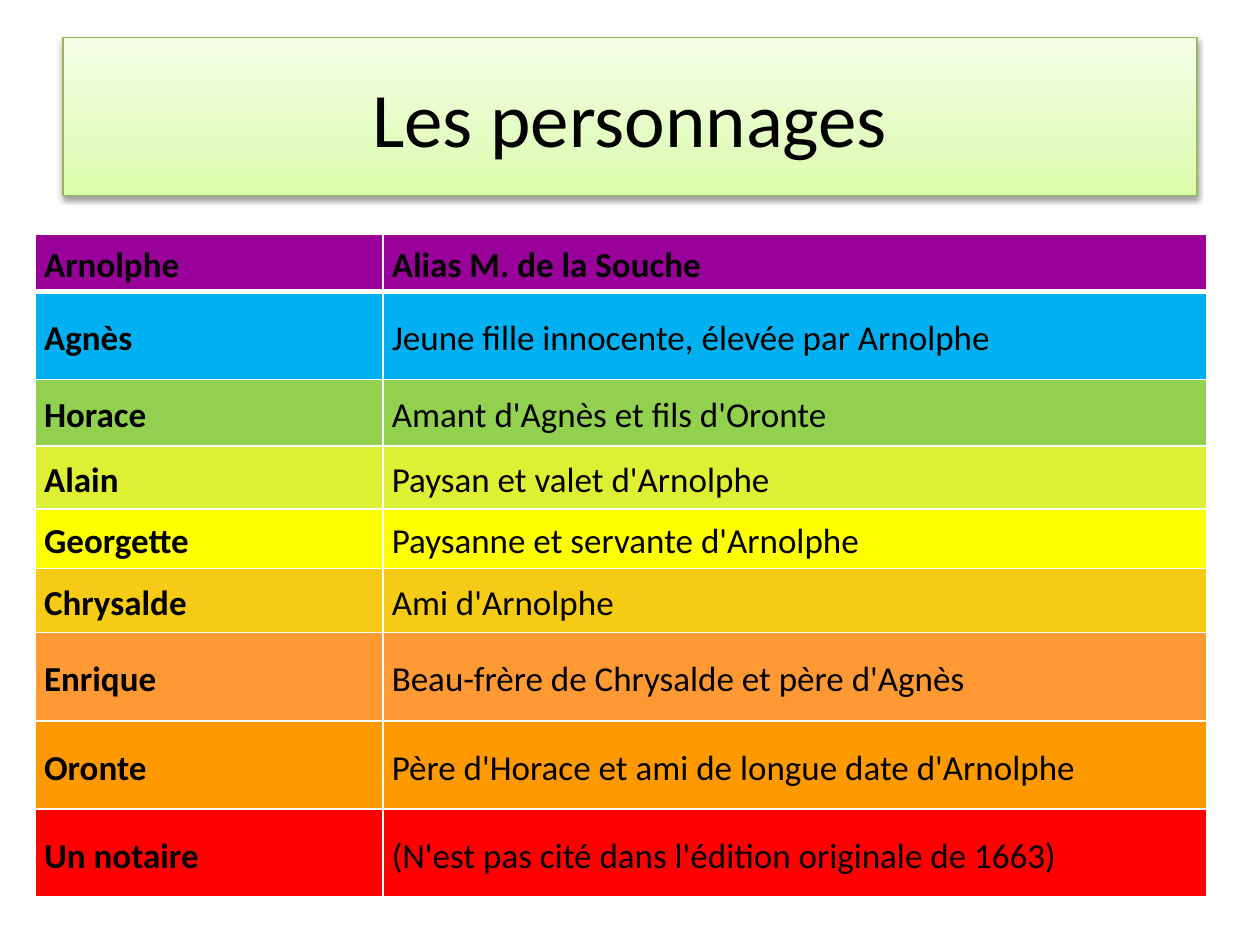
from lxml import etree
from pptx import Presentation
from pptx.dml.color import RGBColor
from pptx.enum.text import MSO_ANCHOR, PP_ALIGN
from pptx.util import Inches, Pt

MIDDLE = MSO_ANCHOR.MIDDLE
CENTER = PP_ALIGN.CENTER
JUSTIFY = PP_ALIGN.JUSTIFY
NS = "http://schemas.openxmlformats.org/drawingml/2006/main"
FONT = "Calibri"
BLACK = RGBColor(0x00, 0x00, 0x00)
WHITE = RGBColor(0xFF, 0xFF, 0xFF)
GREEN = RGBColor(0x98, 0xB9, 0x55)
STOPS = [
    (0, RGBColor(0xDA, 0xFD, 0xA7)),
    (35, RGBColor(0xE4, 0xFC, 0xC2)),
    (100, RGBColor(0xF5, 0xFF, 0xE7)),
]
CAST = [
    ("Arnolphe", "Alias M. de la Souche", 0.38, RGBColor(0x99, 0x00, 0x99)),
    ("Agnès", "Jeune fille innocente, élevée par Arnolphe", 0.7, RGBColor(0x00, 0xB0, 0xF0)),
    ("Horace", "Amant d'Agnès et fils d'Oronte", 0.53, RGBColor(0x92, 0xD0, 0x50)),
    ("Alain", "Paysan et valet d'Arnolphe", 0.5, RGBColor(0xDE, 0xF0, 0x34)),
    ("Georgette", "Paysanne et servante d'Arnolphe", 0.47, RGBColor(0xFF, 0xFF, 0x00)),
    ("Chrysalde", "Ami d'Arnolphe", 0.51, RGBColor(0xF6, 0xCB, 0x16)),
    ("Enrique", "Beau-frère de Chrysalde et père d'Agnès", 0.7, RGBColor(0xFF, 0x99, 0x33)),
    ("Oronte", "Père d'Horace et ami de longue date d'Arnolphe", 0.7, RGBColor(0xFF, 0x99, 0x00)),
    ("Un notaire", "(N'est pas cité dans l'édition originale de 1663)", 0.7, RGBColor(0xFF, 0x00, 0x00)),
]
WIDTHS = [2.76, 6.54]


def style(para, size, bold, align):
    para.alignment = align
    font = para.runs[0].font
    font.name, font.size, font.bold = FONT, Pt(size), bold
    font.color.rgb = BLACK


def add_xml(parent, text):
    parent.append(etree.fromstring(text.replace(">", f' xmlns:a="{NS}">', 1)))


deck = Presentation()
deck.slide_width, deck.slide_height = Inches(10), Inches(7.5)
slide = deck.slides.add_slide(deck.slide_layouts[5])

title = slide.shapes.title
title.left, title.top = Inches(0.5), Inches(0.3)
title.width, title.height = Inches(9), Inches(1.25)
title.text_frame.text = "Les personnages"
title.text_frame.vertical_anchor = MIDDLE
style(title.text_frame.paragraphs[0], 44, False, CENTER)

props = title.element.spPr
stops = "".join(
    f'<a:gs pos="{pos * 1000}"><a:srgbClr val="{color}"/></a:gs>' for pos, color in STOPS
)
add_xml(props, f'<a:gradFill rotWithShape="1"><a:gsLst>{stops}</a:gsLst>'
        '<a:lin ang="16200000" scaled="0"/></a:gradFill>')
title.line.color.rgb = GREEN
title.line.width = Pt(0.75)
add_xml(props, f'<a:effectLst><a:outerShdw blurRad="{Pt(3.1)}" dist="{Pt(1.6)}" dir="5400000" '
        f'rotWithShape="0"><a:srgbClr val="{BLACK}"><a:alpha val="38000"/></a:srgbClr>'
        '</a:outerShdw></a:effectLst>')

high = sum(row[2] for row in CAST)
frame = slide.shapes.add_table(len(CAST), len(WIDTHS), Inches(0.28), Inches(1.86),
                               Inches(sum(WIDTHS)), Inches(high))
table = frame.table
for col, width in zip(table.columns, WIDTHS):
    col.width = Inches(width)

for i, (name, role, height, color) in enumerate(CAST):
    table.rows[i].height = Inches(height)
    for j, text in enumerate((name, role)):
        cell = table.cell(i, j)
        cell.text_frame.text = text
        cell.vertical_anchor = MIDDLE
        cell.margin_left = cell.margin_right = Inches(0.07)
        cell.margin_top = cell.margin_bottom = Inches(0.03)
        para = cell.text_frame.paragraphs[0]
        para.line_spacing = 1.15
        para.space_before = para.space_after = Pt(12)
        style(para, 20, i == 0 or j == 0, JUSTIFY)
        for side in "LRTB":
            thick = (i, side) in ((0, "B"), (1, "T"))
            add_xml(cell._tc.get_or_add_tcPr(),
                    f'<a:ln{side} w="{Pt(3 if thick else 1)}"><a:solidFill>'
                    f'<a:srgbClr val="{WHITE}"/></a:solidFill></a:ln{side}>')
        cell.fill.solid()
        cell.fill.fore_color.rgb = color

deck.save("out.pptx")
